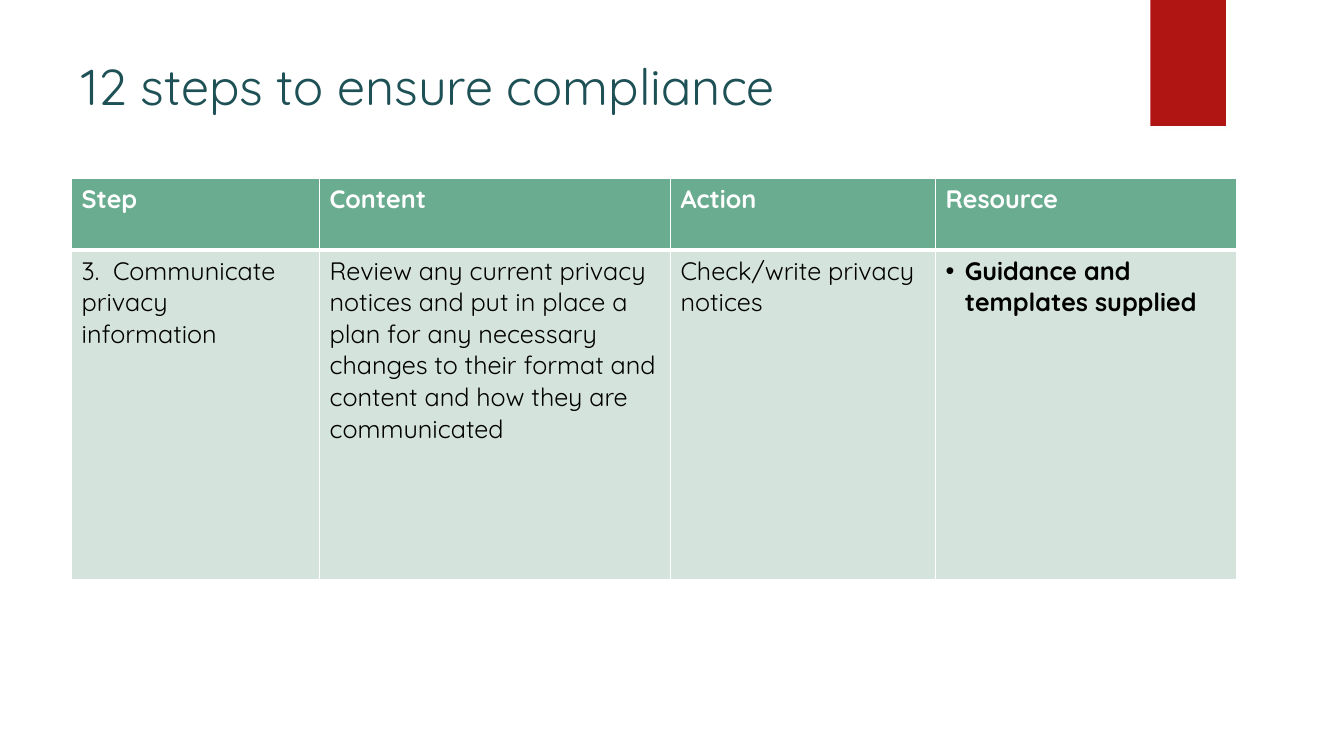
from dataclasses import dataclass

from lxml import etree
from pptx import Presentation
from pptx.dml.color import RGBColor
from pptx.enum.shapes import MSO_SHAPE
from pptx.enum.text import MSO_ANCHOR
from pptx.oxml.ns import qn
from pptx.slide import Slide
from pptx.table import _Cell
from pptx.text.text import _Paragraph
from pptx.util import Inches, Pt

RECTANGLE = MSO_SHAPE.RECTANGLE
TOP = MSO_ANCHOR.TOP

FONT = "Quicksand"
WHITE = RGBColor(0xFF, 0xFF, 0xFF)
BLACK = RGBColor(0x00, 0x00, 0x00)
RED = RGBColor(0xB0, 0x15, 0x13)
TEAL = RGBColor(0x1E, 0x51, 0x55)
GREEN = RGBColor(0x6A, 0xAC, 0x90)
PALE_GREEN = RGBColor(0xD4, 0xE3, 0xDB)

LEFT = 0.71
ROW_HEIGHTS = (0.71, 3.27)
BULLET_INDENT = Inches(0.19)


@dataclass(frozen=True)
class Column:
    heading: str
    text: str
    width: float
    bulleted: bool = False


COLUMNS = (
    Column("Step", "3.  Communicate privacy information", 2.46),
    Column(
        "Content",
        "Review any current privacy notices and put in place a plan for any necessary "
        "changes to their format and content and how they are communicated",
        3.48,
    ),
    Column("Action", "Check/write privacy notices", 2.63),
    Column("Resource", "Guidance and templates supplied", 2.99, bulleted=True),
)


def style_paragraph(paragraph: _Paragraph, size: float, color: RGBColor, bold: bool) -> None:
    paragraph.font.name = FONT
    paragraph.font.size = Pt(size)
    paragraph.font.color.rgb = color
    paragraph.font.bold = bold


def add_bullet(paragraph: _Paragraph) -> None:
    properties = paragraph._p.get_or_add_pPr()
    properties.set("marL", str(BULLET_INDENT))
    properties.set("indent", str(-BULLET_INDENT))
    etree.SubElement(properties, qn("a:buFont"), typeface="Arial")
    etree.SubElement(properties, qn("a:buChar"), char="•")


def add_color(parent: etree._Element, color: RGBColor) -> etree._Element:
    fill = etree.SubElement(parent, qn("a:solidFill"))
    return etree.SubElement(fill, qn("a:srgbClr"), val=str(color))


def set_borders(cell: _Cell, top: float, bottom: float) -> None:
    properties = cell._tc.get_or_add_tcPr()
    for side, width in (("L", 1), ("R", 1), ("T", top), ("B", bottom)):
        line = etree.SubElement(properties, qn(f"a:ln{side}"), w=str(Pt(width)))
        add_color(line, WHITE)


def fill_cell(cell: _Cell, text: str, is_header: bool, bulleted: bool) -> None:
    set_borders(cell, top=1 if is_header else 3, bottom=3 if is_header else 1)
    cell.fill.solid()
    cell.fill.fore_color.rgb = GREEN if is_header else PALE_GREEN
    cell.text = text
    paragraph = cell.text_frame.paragraphs[0]
    if bulleted:
        add_bullet(paragraph)
    style_paragraph(paragraph, 18, WHITE if is_header else BLACK, is_header or bulleted)


def add_ribbon(slide: Slide) -> None:
    """Add the red tab at the top edge, with its soft shadow below."""
    ribbon = slide.shapes.add_shape(
        RECTANGLE, Inches(11.41), Inches(0), Inches(0.75), Inches(1.25)
    )
    ribbon.fill.solid()
    ribbon.fill.fore_color.rgb = RED
    ribbon.line.fill.background()
    ribbon.shadow.inherit = False
    effects = ribbon._element.spPr.find(qn("a:effectLst"))
    shadow = etree.SubElement(
        effects, qn("a:outerShdw"), blurRad=str(Pt(3)), dist=str(Pt(2)), dir="5400000"
    )
    etree.SubElement(add_color(shadow, BLACK), qn("a:alpha"), val="45000")


def add_title(slide: Slide, text: str) -> None:
    title = slide.shapes.add_textbox(Inches(LEFT), Inches(0.5), Inches(10.29), Inches(1))
    frame = title.text_frame
    frame.word_wrap = True
    frame.vertical_anchor = TOP
    frame.text = text
    style_paragraph(frame.paragraphs[0], 36, TEAL, False)


def add_steps_table(slide: Slide) -> None:
    table = slide.shapes.add_table(
        len(ROW_HEIGHTS),
        len(COLUMNS),
        Inches(LEFT),
        Inches(1.77),
        Inches(sum(column.width for column in COLUMNS)),
        Inches(sum(ROW_HEIGHTS)),
    ).table
    for row, height in zip(table.rows, ROW_HEIGHTS):
        row.height = Inches(height)
    for index, column in enumerate(COLUMNS):
        table.columns[index].width = Inches(column.width)
        fill_cell(table.cell(0, index), column.heading, True, False)
        fill_cell(table.cell(1, index), column.text, False, column.bulleted)


def main() -> None:
    presentation = Presentation()
    presentation.slide_width = Inches(13.33)
    presentation.slide_height = Inches(7.5)
    slide = presentation.slides.add_slide(presentation.slide_layouts[6])
    add_ribbon(slide)
    add_title(slide, "12 steps to ensure compliance")
    add_steps_table(slide)
    presentation.save("out.pptx")


if __name__ == "__main__":
    main()
